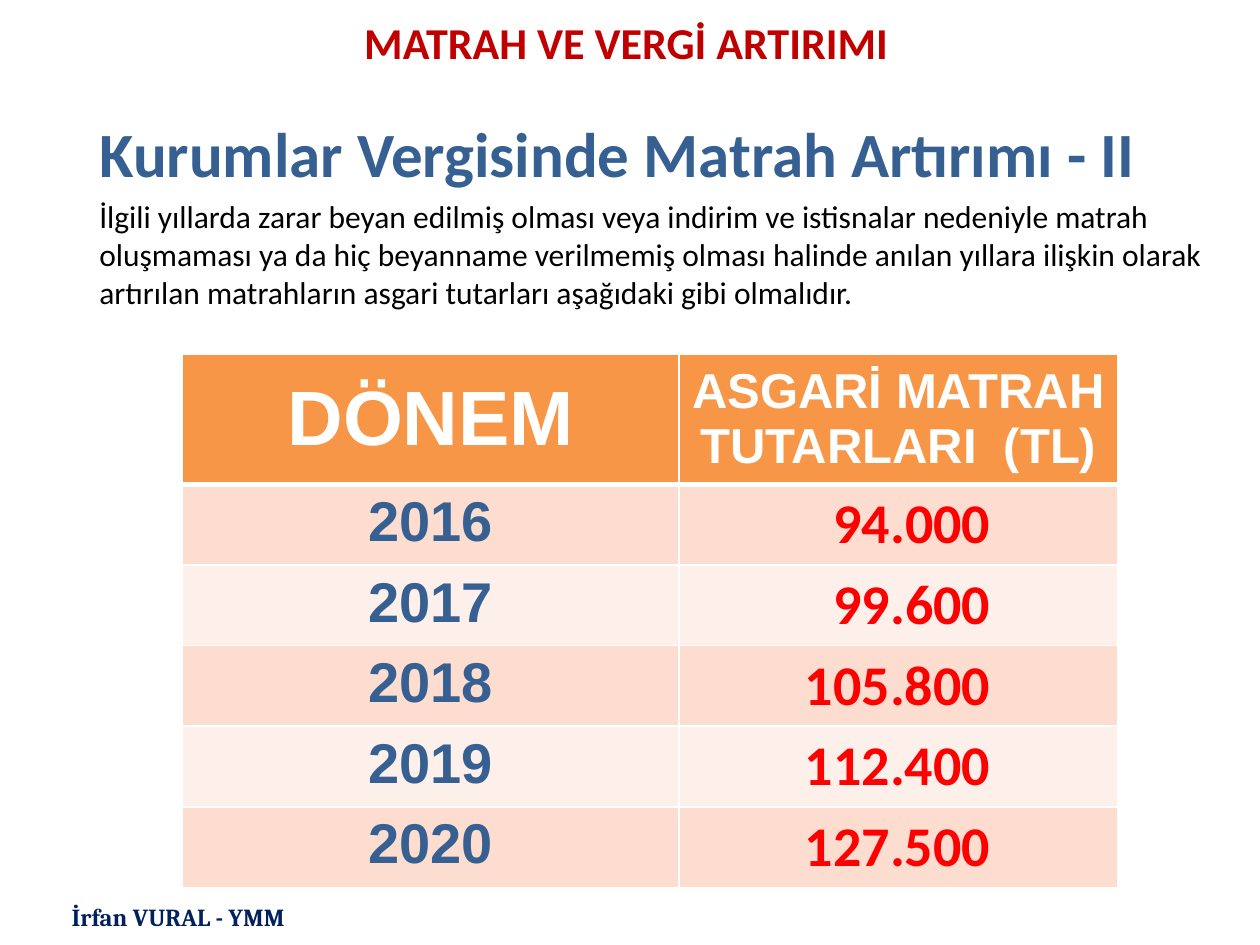
"""Build a slide on minimum corporate tax base amounts by period."""
from lxml import etree
from pptx import Presentation
from pptx import util as u
from pptx.dml.color import RGBColor
from pptx.enum import text
from pptx.oxml.ns import qn

WHITE = RGBColor(0xFF, 0xFF, 0xFF)
BLACK = RGBColor(0x00, 0x00, 0x00)
NAVY = RGBColor(0x00, 0x20, 0x60)
BLUE = RGBColor(0x37, 0x60, 0x92)
CRIMSON = RGBColor(0xC0, 0x00, 0x00)
RED = RGBColor(0xFF, 0x00, 0x00)
ORANGE = RGBColor(0xF7, 0x96, 0x46)
BANDS = (RGBColor(0xFC, 0xDD, 0xCF), RGBColor(0xFD, 0xEF, 0xE9))

CENTER, RIGHT = text.PP_ALIGN.CENTER, text.PP_ALIGN.RIGHT
TOP, MIDDLE = text.MSO_ANCHOR.TOP, text.MSO_ANCHOR.MIDDLE

EXPLANATION = (
    "İlgili yıllarda zarar beyan edilmiş olması veya indirim ve istisnalar "
    "nedeniyle matrah oluşmaması ya da hiç beyanname verilmemiş olması halinde "
    "anılan yıllara ilişkin olarak artırılan matrahların asgari tutarları "
    "aşağıdaki gibi olmalıdır."
)
HEADERS = (("DÖNEM", 44), ("ASGARİ MATRAH TUTARLARI  (TL)", 28))
MINIMUM_BASES = {
    "2016": "94.000",
    "2017": "99.600",
    "2018": "105.800",
    "2019": "112.400",
    "2020": "127.500",
}


def write(paragraph, content, size, color, name="Calibri", bold=True, **layout):
    """Fill a paragraph with one formatted run."""
    run = paragraph.add_run()
    run.text = content
    font_format = {"size": u.Pt(size), "name": name, "bold": bold}
    for key, value in font_format.items():
        setattr(run.font, key, value)
    run.font.color.rgb = color
    for key, value in layout.items():
        setattr(paragraph, key, value)


def add_title(slide, content):
    """Place and format the title placeholder."""
    title = slide.shapes.title
    position = {"left": 0.47, "top": 0.31, "width": 9, "height": 0.05}
    for key, value in position.items():
        setattr(title, key, u.Inches(value))
    frame = title.text_frame
    frame.auto_size = text.MSO_AUTO_SIZE.NONE
    frame.vertical_anchor = MIDDLE
    write(frame.paragraphs[0], content, 25.2, CRIMSON, alignment=CENTER)


def add_text_box(slide, left, top, width, height):
    """Add a wrapping text box and return its text frame."""
    box = slide.shapes.add_textbox(*map(u.Inches, (left, top, width, height)))
    box.text_frame.word_wrap = True
    return box.text_frame


def set_borders(cell, widths):
    """Give a cell white borders of the given widths in points."""
    properties = cell._tc.get_or_add_tcPr()
    for index, (side, width) in enumerate(widths.items()):
        line = etree.Element(qn(f"a:{side}"), w=str(u.Pt(width)))
        fill = etree.SubElement(line, qn("a:solidFill"))
        etree.SubElement(fill, qn("a:srgbClr"), val=str(WHITE))
        properties.insert(index, line)


def format_cell(cell, content, size, color, fill, name="Arial", anchor=MIDDLE,
                alignment=CENTER, top=1, bottom=1):
    """Write a table cell with its fill and borders."""
    cell.fill.solid()
    cell.fill.fore_color.rgb = fill
    cell.vertical_anchor = anchor
    write(cell.text_frame.paragraphs[0], content, size, color, name,
          alignment=alignment)
    set_borders(cell, {"lnL": 1, "lnR": 1, "lnT": top, "lnB": bottom})


def add_base_table(slide):
    """Add the table of periods and minimum tax bases."""
    bounds = map(u.Inches, (1.45, 2.81, 7.42, 4.2))
    table = slide.shapes.add_table(len(MINIMUM_BASES) + 1, 2, *bounds).table
    for column, width in zip(table.columns, (3.94, 3.48)):
        column.width = u.Inches(width)
    for index, row in enumerate(table.rows):
        row.height = u.Inches(0.64 if index else 1.02)
    for column, (header, size) in enumerate(HEADERS):
        format_cell(table.cell(0, column), header, size, WHITE, ORANGE, bottom=3)
    for row, (period, amount) in enumerate(MINIMUM_BASES.items(), 1):
        band = BANDS[(row - 1) % 2]
        top = 3 if row == 1 else 1
        format_cell(table.cell(row, 0), period, 32, BLUE, band, anchor=TOP, top=top)
        amount_cell = table.cell(row, 1)
        amount_cell.margin_right = u.Inches(1.01)
        format_cell(amount_cell, amount, 32, RED, band, "Calibri",
                    alignment=RIGHT, top=top)


def main():
    """Build and save the presentation."""
    presentation = Presentation()
    presentation.slide_width = u.Inches(10)
    presentation.slide_height = u.Inches(7.5)
    slide = presentation.slides.add_slide(presentation.slide_layouts[5])
    author = add_text_box(slide, 0.47, 7.11, 3.07, 0.34)
    write(author.paragraphs[0], "İrfan VURAL - YMM", 14, NAVY, "Cambria")
    add_title(slide, "MATRAH VE VERGİ ARTIRIMI")
    body = add_text_box(slide, 0.69, 0.86, 9.07, 1.8)
    write(body.paragraphs[0], "Kurumlar Vergisinde Matrah Artırımı - II", 36, BLUE)
    write(body.add_paragraph(), EXPLANATION, 18, BLACK, bold=False,
          space_before=u.Pt(4))
    add_base_table(slide)
    presentation.save("out.pptx")


if __name__ == "__main__":
    main()
